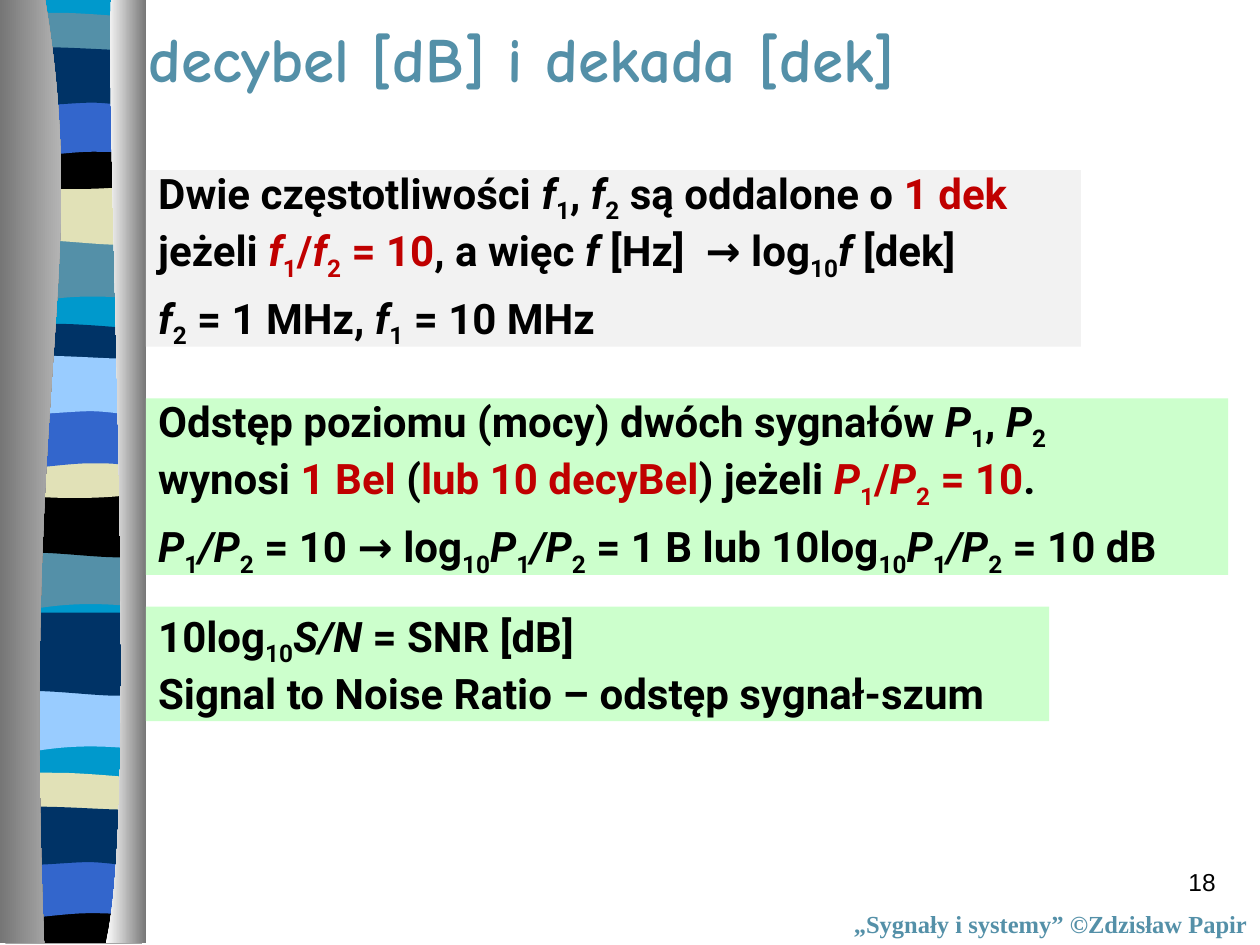
import lxml.etree
import pptx
import pptx.dml.color
import pptx.enum.shapes
import pptx.enum.text
import pptx.oxml.ns
import pptx.util

Cm = pptx.util.Cm
ALIGN = pptx.enum.text.PP_ALIGN
ANCHOR = pptx.enum.text.MSO_ANCHOR
FIT = pptx.enum.text.MSO_AUTO_SIZE
qn = pptx.oxml.ns.qn

TEAL, NAVY, BLUE, SKY = "5490A8", "003366", "3366CC", "99CCFF"
CREAM, BLACK, CYAN = "E1E1B7", "000000", "0099CC"
RED, GREY, GREEN = "C00000", "F2F2F2", "CCFFCC"

WAVES = {
    "tail": [(2.75, 0), (2.75, 1.2), (0.86, 0.99, 0.48, 1.4, 0, 1.2), (0, 0)],
    "dip": [(2.75, -0.13), (2.75, 1.2), (2.3, 1.4, 0.86, 1.07, 0, 1.2), (0, -0.13)],
    "lens": [(2.75, 0.13), (2.75, 0.74), (2.3, 0.84, 0.46, 0.84, 0, 0.74), (0, 0.13),
             (0.18, 0, 0.6, 0.02, 1.07, 0.02), (1.52, 0.02, 2.4, 0.1, 2.75, 0.13)],
    "bowl": [(2.75, 0), (2.75, 0.81), (2.3, 0.97, 0.48, 0.97, 0, 0.81), (0, 0),
             (1.7, 0.13, 2.18, 0, 2.75, 0)],
    "arch": [(2.75, 0), (2.75, 1.2), (2.34, 1.07, 2.16, 1.07, 1.7, 1.07),
             (1.24, 1.07, 0.43, 1.2, 0, 1.2), (0, 0)],
    "flag": [(2.75, 0.13), (2.75, 0.91), (2.57, 1.04, 2.16, 0.91, 1.7, 0.91),
             (1.24, 0.91, 0.28, 1.04, 0, 0.91), (0, 0.13),
             (0.38, 0, 1.88, 0.13, 2.34, 0.13), (2.75, 0.13)],
    "floor": [(2.75, 0), (2.75, 0.8), (0, 0.8), (0, 0), (1.7, 0.13, 2.18, 0, 2.75, 0)],
    "backdrop": [(2.75, 0.14), (2.75, 18.83), (0, 18.83), (0, 0.14)],
}
BAND_GROWTH = 0.14
BANDS = [
    ("backdrop", 0.15, 0, CYAN),
    ("tail", 0.14, 4.7, TEAL), ("dip", 0.15, 3.53, CREAM), ("lens", 0.15, 0.38, TEAL),
    ("bowl", 0.14, 2.74, BLACK), ("arch", 0.15, 1.85, BLUE), ("flag", 0.15, 1.02, NAVY),
    ("tail", 0.1, 10.9, TEAL), ("dip", 0.12, 9.83, BLACK), ("lens", 0.12, 6.65, NAVY),
    ("bowl", 0.12, 8.97, CREAM), ("arch", 0.12, 8.13, BLUE), ("flag", 0.12, 7.24, SKY),
    ("tail", 0.1, 13.77, SKY), ("dip", 0.12, 12.62, NAVY), ("lens", 0.1, 15.7, CREAM),
    ("floor", 0.11, 18.08, BLACK), ("arch", 0.08, 17.2, BLUE), ("flag", 0.08, 16.33, NAVY),
]
CURTAINS = [
    ([(0.91, 0), (1.83, 5.49, 0.43, 7.52, 0.89, 19.02), (0, 19.02), (0, 0)],
     ("767676", "D3D3D3")),
    ([(2.24, 0), (2.13, 3.18, 2.82, 16.4, 2.13, 19.02), (2.95, 19.02), (2.95, 0)],
     ("FFFFFF", "767676")),
]

DECADE = [
    (0, [("Dwie częstotliwości ", ""), ("f", "i"), ("1", "s"), (", ", ""), ("f", "i"),
         ("2", "s"), (" są oddalone o ", ""), ("1 dek", "r")]),
    (6, [("jeżeli ", ""), ("f", "ir"), ("1", "sr"), ("/", "r"), ("f", "ir"), ("2", "sr"),
         (" = 10", "r"), (", a więc ", ""), ("f", "i"), (" [Hz]  → log", ""), ("10", "s"),
         ("f ", "i"), ("[dek]", "")]),
    (0, [("f", "i"), ("2", "s"), (" = 1 MHz, ", ""), ("f", "i"), ("1", "s"),
         (" = 10 MHz", "")]),
]
POWER_RATIO = [("P", "i"), ("1", "s"), ("/P", "i"), ("2", "s")]
DECIBEL = [
    (6, [("Odstęp poziomu (mocy) dwóch sygnałów ", ""), ("P", "i"), ("1", "s"), (", ", ""),
         ("P", "i"), ("2", "s"), ("\n", ""), ("wynosi ", ""), ("1 Bel ", "r"), ("(", ""),
         ("lub 10 decyBel", "r"), (") jeżeli ", ""), ("P", "ir"), ("1", "sr"), ("/", "r"),
         ("P", "ir"), ("2", "sr"), (" = 10", "r"), (".", "")]),
    (0, POWER_RATIO + [(" = 10 →", ""), (" ", "t"), ("log", ""), ("10", "s")] + POWER_RATIO
     + [(" = 1 B lub 10log", ""), ("10", "s")] + POWER_RATIO + [(" = 10 dB", "")]),
]
NOISE = [
    (0, [("10log", ""), ("10", "s"), ("S/N", "i"), (" = SNR [dB]", "")]),
    (0, [("Signal to Noise Ratio – odstęp sygnał-szum", "")]),
]
PANEL_LEFT = 2.94
PANELS = [
    (3.43, 18.85, 3.56, GREY, DECADE),
    (8.03, 21.82, 3.56, GREEN, DECIBEL),
    (12.23, 18.21, 2.31, GREEN, NOISE),
]
LABELS = [
    ("decybel [dB] i dekada [dek]", (2.74, 0.43, 22.66, 1.47), 36, "Comic Neue", TEAL,
     True, ALIGN.LEFT, ANCHOR.MIDDLE, True),
    ("„Sygnały i systemy” ©Zdzisław Papir", (16.87, 18.21, 8.53, 0.86), 14,
     "Times New Roman", TEAL, True, ALIGN.RIGHT, ANCHOR.TOP, False),
    ("18", (19.48, 17.35, 5.28, 1.27), 14, "Arial", BLACK, False, ALIGN.RIGHT,
     ANCHOR.TOP, True),
]


def rgb(value):
    return pptx.dml.color.RGBColor.from_string(value)


def add_outline(slide, outline, left=0, top=0, growth=0):
    points = [step[n:n + 2] for step in outline for n in range(0, len(step), 2)]
    heights = [y for x, y in points]
    middle = (min(heights) + max(heights)) / 2
    corners = [(Cm(left + x), Cm(top + y + (growth if y > middle else -growth)))
               for x, y in points]
    builder = slide.shapes.build_freeform(*corners[0])
    builder.add_line_segments(corners[1:], close=True)
    ribbon = builder.convert_to_shape()
    segments = iter(list(ribbon._element.iter(qn("a:lnTo"))))
    for step in outline[1:]:
        segment = next(segments)
        if len(step) == 6:
            curve = lxml.etree.Element(qn("a:cubicBezTo"))
            segment.addprevious(curve)
            for part in (segment, next(segments), next(segments)):
                curve.append(part[0])
                part.getparent().remove(part)
    ribbon.shadow.inherit = False
    ribbon.line.fill.background()
    return ribbon


def add_run(paragraph, text, size, font, color, bold):
    run = paragraph.add_run()
    run.text = text
    run.font.size = pptx.util.Pt(size)
    run.font.name = font
    run.font.bold = bold
    run.font.color.rgb = rgb(color)
    return run


def add_panel(slide, top, width, height, color, paragraphs):
    panel = slide.shapes.add_shape(pptx.enum.shapes.MSO_SHAPE.RECTANGLE,
                                   Cm(PANEL_LEFT), Cm(top), Cm(width), Cm(height))
    panel.shadow.inherit = False
    panel.fill.solid()
    panel.fill.fore_color.rgb = rgb(color)
    panel.line.fill.background()
    frame = panel.text_frame
    frame.word_wrap = False
    frame.auto_size = FIT.SHAPE_TO_FIT_TEXT
    frame.vertical_anchor = ANCHOR.MIDDLE
    for index, (space_after, runs) in enumerate(paragraphs):
        paragraph = frame.add_paragraph() if index else frame.paragraphs[0]
        paragraph.alignment = ALIGN.LEFT
        paragraph.space_after = pptx.util.Pt(space_after)
        for text, marks in runs:
            if text == "\n":
                paragraph.add_line_break()
                continue
            run = add_run(paragraph, text, 24, "Roboto", RED if "r" in marks else BLACK, True)
            run.font.italic = "i" in marks
            if "s" in marks:
                run.font._element.set("baseline", "-25000")
            if "t" in marks:
                run.font._element.set("spc", "-300")


def add_label(slide, text, box, size, font, color, bold, align, anchor, wrap):
    frame = slide.shapes.add_textbox(*(Cm(v) for v in box)).text_frame
    frame.word_wrap = wrap
    frame.auto_size = FIT.NONE if wrap else FIT.SHAPE_TO_FIT_TEXT
    frame.vertical_anchor = anchor
    frame.paragraphs[0].alignment = align
    add_run(frame.paragraphs[0], text, size, font, color, bold)


def main():
    deck = pptx.Presentation()
    deck.slide_width, deck.slide_height = Cm(25.4), Cm(19.05)
    slide = deck.slides.add_slide(deck.slide_layouts[6])
    for wave, left, top, color in BANDS:
        band = add_outline(slide, WAVES[wave], left, top, BAND_GROWTH)
        band.fill.solid()
        band.fill.fore_color.rgb = rgb(color)
    for outline, shades in CURTAINS:
        curtain = add_outline(slide, outline)
        curtain.fill.gradient()
        curtain.fill.gradient_angle = 0
        for stop, shade in zip(curtain.fill.gradient_stops, shades):
            stop.color.rgb = rgb(shade)
    for panel in PANELS:
        add_panel(slide, *panel)
    for label in LABELS:
        add_label(slide, *label)
    deck.save("out.pptx")


if __name__ == "__main__":
    main()
